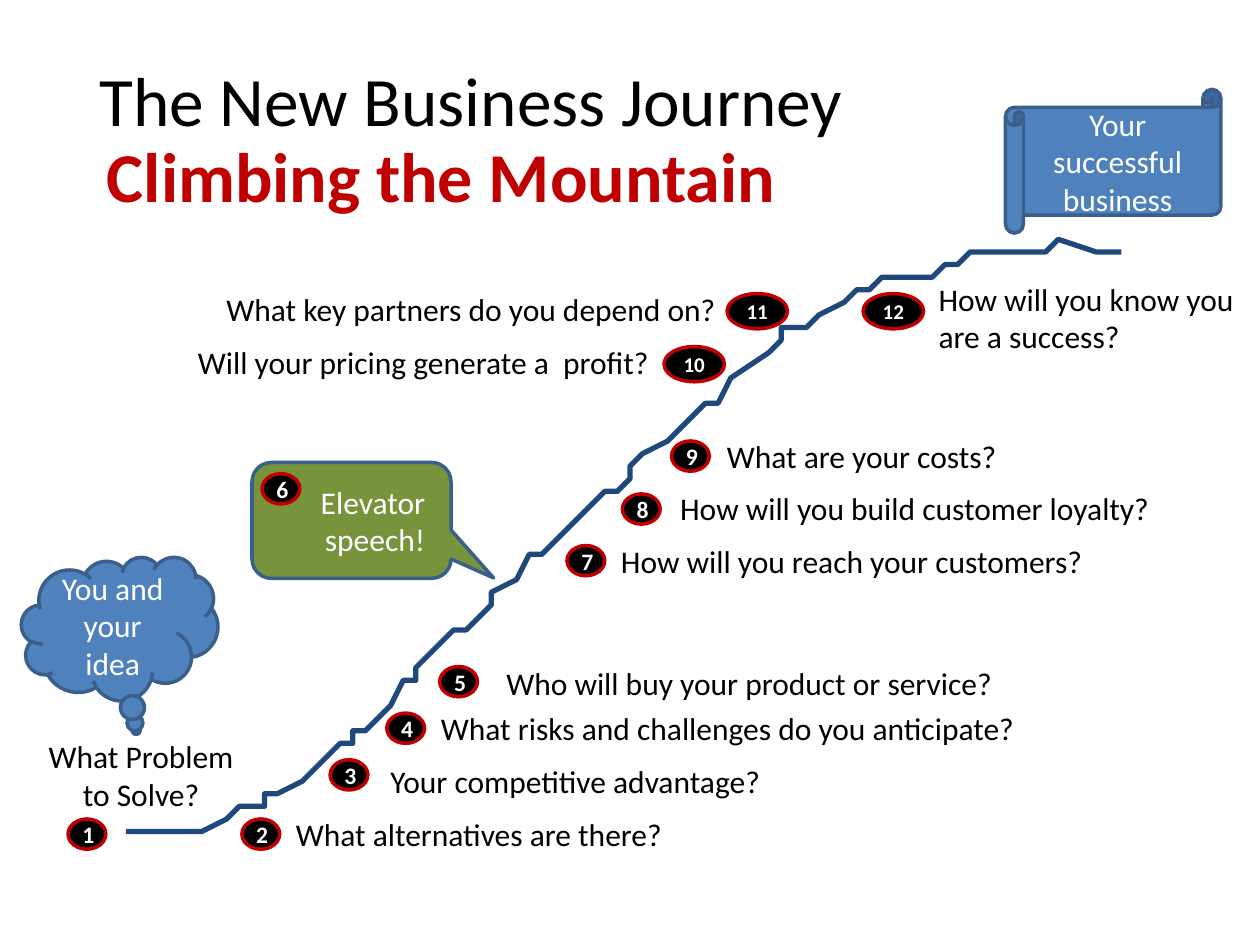
import pptx
import pptx.util
import pptx.dml.color
import pptx.enum.shapes
import pptx.enum.text

SHAPE = pptx.enum.shapes.MSO_SHAPE
ALIGN = pptx.enum.text.PP_ALIGN
ANCHOR = pptx.enum.text.MSO_ANCHOR

deck = pptx.Presentation()
deck.slide_width = pptx.util.Inches(10)
deck.slide_height = pptx.util.Inches(7.5)
# Grid of 100 columns by 75 rows
COLUMN = deck.slide_width / 100
ROW = deck.slide_height / 75
page = deck.slides.add_slide(deck.slide_layouts[5])


def paint(target, fill=None, line=None, width=2):
    """Fill and outline a shape with hex colours, without shadow."""
    target.shadow.inherit = False
    if fill:
        target.fill.solid()
        target.fill.fore_color.rgb = pptx.dml.color.RGBColor.from_string(fill)
    else:
        target.fill.background()
    target.line.color.rgb = pptx.dml.color.RGBColor.from_string(line)
    target.line.width = pptx.util.Pt(width)


def write(box, text, at=None, size=18, color="000000", bold=False,
          align=ALIGN.LEFT, anchor=ANCHOR.TOP, wrap=True, inset=(1, 0.5)):
    """Place a box on the grid, then write and format its text."""
    if at:
        box.left, box.top, box.width, box.height = [
            int(n * step) for n, step in zip(at, (COLUMN, ROW, COLUMN, ROW))]
    frame = box.text_frame
    frame.auto_size = pptx.enum.text.MSO_AUTO_SIZE.NONE
    frame.word_wrap = wrap
    frame.vertical_anchor = anchor
    frame.margin_left = frame.margin_right = int(inset[0] * COLUMN)
    frame.margin_top = frame.margin_bottom = int(inset[1] * ROW)
    para = frame.paragraphs[0]
    para.text = text
    para.alignment = align
    for span in para.runs:
        span.font.name = "Calibri"
        span.font.size = pptx.util.Pt(size)
        span.font.bold = bold
        span.font.color.rgb = pptx.dml.color.RGBColor.from_string(color)


# Title and subtitle
write(page.shapes.title, "The New Business Journey", at=(6.9, 4, 86.2, 7.6),
      size=39.6, anchor=ANCHOR.MIDDLE)
write(page.shapes.add_textbox(0, 0, 0, 0), "Climbing the Mountain",
      at=(7.5, 10, 55.7, 7.7), size=40, color="C00000", bold=True, wrap=False)

# Start, elevator speech and summit
callouts = [
    (SHAPE.CLOUD_CALLOUT, "You and your idea", (1.7, 44.2, 15.6, 11.4),
     "4F81BD", (0.084, 0.708), ALIGN.CENTER, 1),
    (SHAPE.ROUNDED_RECTANGULAR_CALLOUT, "Elevator\vspeech!", (20, 36.7, 15.8, 9.2),
     "77933C", (0.714, 0.497, 0.167), ALIGN.RIGHT, 1.6),
    (SHAPE.HORIZONTAL_SCROLL, "Your successful business", (79.8, 7.1, 17.1, 11.4),
     "4F81BD", (), ALIGN.CENTER, 1),
]
for kind, text, at, fill, adjustments, align, side in callouts:
    callout = page.shapes.add_shape(kind, 0, 0, 0, 0)
    for index, value in enumerate(adjustments):
        callout.adjustments[index] = value
    paint(callout, fill, "3A5F8C")
    write(callout, text, at=at, color="FFFFFF", align=align,
          anchor=ANCHOR.MIDDLE, inset=(side, 0.5))

# Mountain path
points = [
    (9.5, 65.7), (11.3, 66), (15.4, 65.8), (16.5, 65.6), (17.7, 65.2),
    (18.8, 64.5), (19.8, 64), (20.7, 63.5), (21.4, 63.3), (22.5, 62.6),
    (23.5, 62), (24.5, 61.5), (25.9, 60.3), (27.3, 59.4), (28.1, 58.6),
    (28.3, 58.3), (28.7, 58.1), (29.4, 57.6), (30.6, 56.3), (31.4, 55.5),
    (32.4, 54.2), (33.1, 53.5), (33.3, 53.1), (34.2, 52.4), (34.9, 51.4),
    (35.9, 50.4), (36.7, 49.7), (37.8, 48.8), (39.2, 47.6), (39.4, 47.3),
    (40.8, 46), (41.4, 45.5), (42.2, 44.5), (43.2, 43.6), (44.7, 42.1),
    (45.9, 41.3), (46.2, 40.9), (47.2, 40.3), (48.2, 39.3), (49.1, 38.6),
    (49.5, 38.1), (50.4, 37.4), (51.3, 36.4), (52.6, 34.9), (53.7, 33.9),
    (54.1, 33.6), (55.1, 32.6), (55.5, 32.4), (56.8, 31.5), (58.5, 30.3),
    (60.7, 28.2), (61.1, 28), (61.3, 27.7), (61.7, 27.4), (62.5, 26.5),
    (63.7, 25.9), (64.6, 25.2), (66.6, 23.9), (67.6, 23.3), (68.7, 22.7),
    (70.4, 22), (71.1, 21.9), (73.9, 21.7), (74.9, 21.4), (75.9, 21.1),
    (77.4, 20.5), (78.4, 20.2), (80.4, 20), (81.1, 19.8), (83.4, 19.5),
    (84.3, 19.4), (87.4, 19.6), (89.4, 19.6),
]
trail = page.shapes.build_freeform(*points[0], scale=COLUMN)
trail.add_line_segments(points[1:], close=False)
paint(trail.convert_to_shape(), None, "1F497D", 3)

# Questions along the path: number, badge corner, text, text box, alignment
stops = [
    (1, (5.4, 65), "What Problem to Solve?", (2.1, 58, 18.2, 7.1), ALIGN.CENTER),
    (2, (19.2, 65), "What alternatives are there?", (22.5, 64.2, 32.7, 4), ALIGN.LEFT),
    (3, (26.2, 60.3), "Your competitive advantage?", (30, 60, 36.8, 4), ALIGN.LEFT),
    (4, (30.7, 56.6), "What risks and challenges do you anticipate?",
     (33.9, 55.8, 47.7, 4), ALIGN.CENTER),
    (5, (34.9, 52.9), "Who will buy your product or service?",
     (39.2, 52.2, 40.8, 4), ALIGN.LEFT),
    (6, (20.8, 37.6), None, None, None),
    (7, (45, 43.3), "How will you reach your customers?",
     (48.3, 42.5, 41.5, 4), ALIGN.LEFT),
    (8, (49.4, 39.2), "How will you build customer loyalty?",
     (52.7, 38.3, 39.8, 4), ALIGN.CENTER),
    (9, (53.3, 35), "What are your costs?", (56.7, 34.2, 25.1, 4), ALIGN.LEFT),
    (10, (52.7, 27.5), "Will your pricing generate a  profit?",
     (13.3, 26.7, 39.2, 4), ALIGN.RIGHT),
    (11, (57.7, 23.3), "What key partners do you depend on?",
     (15.2, 22.5, 42.6, 4), ALIGN.RIGHT),
    (12, (68.5, 23.3), "How will you know you are a success?",
     (73.5, 21.7, 26.5, 7.1), ALIGN.LEFT),
]
for number, corner, text, at, align in stops:
    if text:
        write(page.shapes.add_textbox(0, 0, 0, 0), text, at=at, align=align)
    extent, size = ((3, 2.4), 13.5) if number < 10 else ((4.8, 2.8), 12)
    badge = page.shapes.add_shape(SHAPE.OVAL, 0, 0, 0, 0)
    paint(badge, "000000", "C00000")
    write(badge, str(number), at=corner + extent, size=size, color="FFFFFF",
          bold=True, align=ALIGN.CENTER, anchor=ANCHOR.MIDDLE, inset=(0.7, 0.4))

deck.save("out.pptx")
